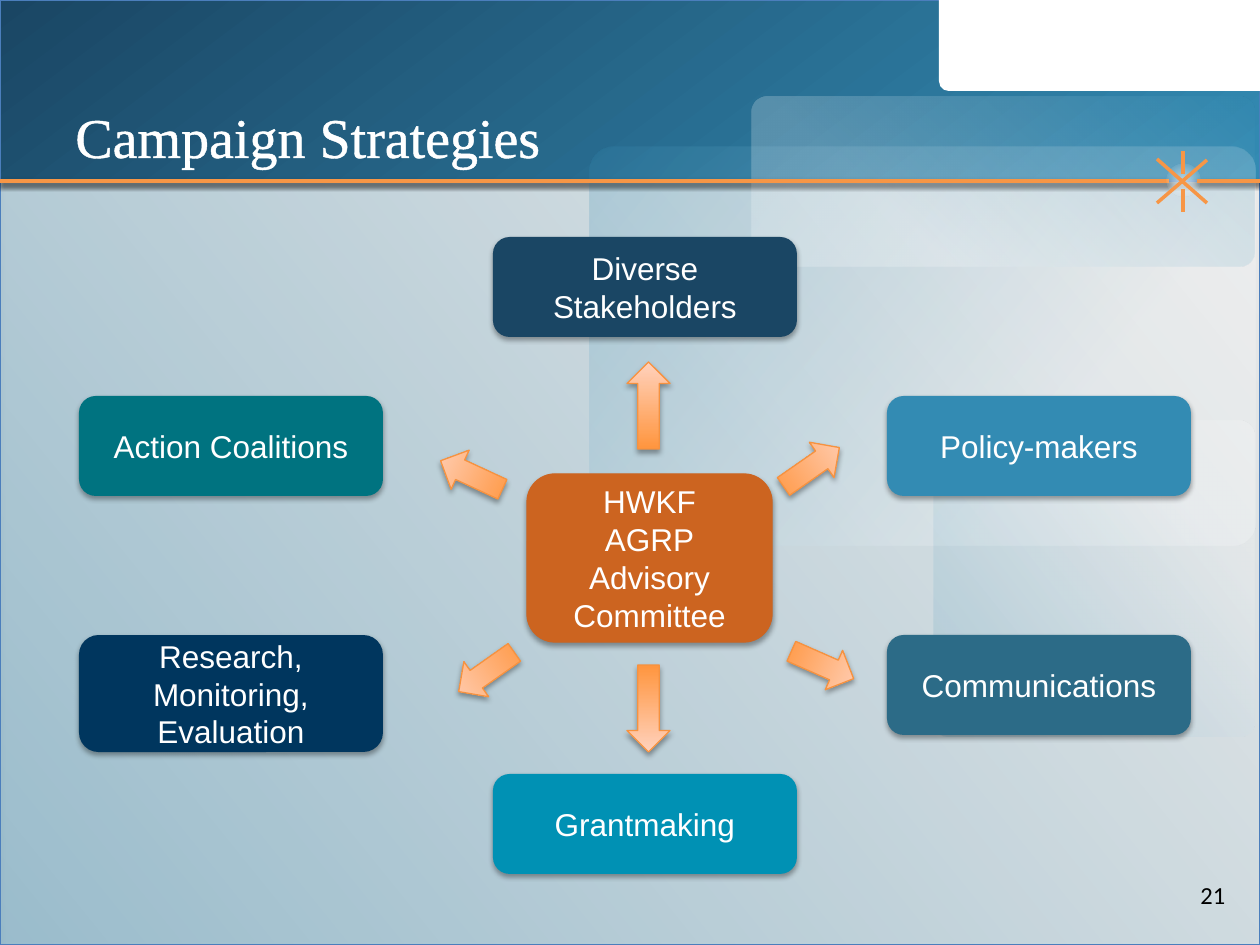
from lxml import etree
from pptx import Presentation
from pptx import util as u
from pptx.dml.color import RGBColor
from pptx.enum import shapes, text
from pptx.oxml import parse_xml
from pptx.oxml.ns import nsdecls, qn

PX = u.Inches(1) / 126
KIND = shapes.MSO_SHAPE

WHITE = RGBColor(0xFF, 0xFF, 0xFF)
BLACK = RGBColor(0x00, 0x00, 0x00)
NAVY = RGBColor(0x1A, 0x46, 0x64)
BLUE = RGBColor(0x33, 0x8B, 0xB3)
SLATE = RGBColor(0x2C, 0x6B, 0x87)
TEAL = RGBColor(0x00, 0x73, 0x80)
MIDNIGHT = RGBColor(0x00, 0x36, 0x5E)
CYAN = RGBColor(0x00, 0x91, 0xB4)
RUST = RGBColor(0xCC, 0x64, 0x20)
ORANGE = RGBColor(0xF7, 0x96, 0x46)
FRAME = RGBColor(0x4B, 0x7E, 0xBC)
ARROW_EDGE = RGBColor(0xF6, 0x92, 0x40)
ARROW_TAIL = RGBColor(0xFF, 0x95, 0x3E)
ARROW_HEAD = RGBColor(0xFF, 0xD2, 0xBD)

CARD_WIDTH, CARD_HEIGHT = 304, 100
LEFT, MIDDLE, RIGHT = 79, 493, 887
CARDS = [
    ("Diverse Stakeholders", MIDDLE, 237, CARD_HEIGHT, NAVY),
    ("Policy-makers", RIGHT, 396, CARD_HEIGHT, BLUE),
    ("Communications", RIGHT, 635, CARD_HEIGHT, SLATE),
    ("Action Coalitions", LEFT, 396, CARD_HEIGHT, TEAL),
    ("Research, Monitoring, Evaluation", LEFT, 635, 117, MIDNIGHT),
    ("Grantmaking", MIDDLE, 774, CARD_HEIGHT, CYAN),
]
# left, top, height, rotation
ARROWS = [
    (627, 362, 87, 0),
    (627, 665, 87, 180),
    (801, 631, 68, 113.8),
    (790, 433, 68, 55.1),
    (465, 638, 68, 234.8),
    (450, 441, 68, 294.8),
]
# left, top, width, height, corner, white stop, opacity, angle
PANELS = [
    (590, 147, 665, 399, 0.06, 29, 22, 219),
    (752, 97, 502, 170, 0.09, 29, 22, 312),
    (934, 421, 320, 315, 0.05, 23, 17, 143),
]
STAR_RAYS = [
    (1183, 151, 1183, 174),
    (1207, 160, 1157, 203),
    (1157, 159, 1207, 203),
    (1183, 212, 1183, 189),
]


def px(*values):
    return [u.Emu(round(value * PX)) for value in values]


def add_shadow(effects, opacity):
    effects.append(parse_xml(
        f'<a:outerShdw {nsdecls("a")} blurRad="{u.Pt(3.1)}" dist="{u.Pt(1.8)}" '
        f'dir="5400000" rotWithShape="0"><a:srgbClr val="000000">'
        f'<a:alpha val="{opacity * 1000}"/></a:srgbClr></a:outerShdw>'))


def set_gradient(shape, stops, angle=None):
    """Stops are (position, colour, opacity); no angle means a circular one."""
    marks = "".join(
        f'<a:gs pos="{place * 1000}"><a:srgbClr val="{color}">'
        f'<a:alpha val="{opacity * 1000}"/></a:srgbClr></a:gs>'
        for place, color, opacity in stops)
    if angle is None:
        course = ('<a:path path="circle"><a:fillToRect l="50000" t="50000" '
                  'r="50000" b="50000"/></a:path>')
    else:
        course = f'<a:lin ang="{angle * 60000}" scaled="0"/>'
    shape.fill.background()
    blank = shape._element.spPr.find(qn("a:noFill"))
    blank.getparent().replace(blank, parse_xml(
        f'<a:gradFill {nsdecls("a")} rotWithShape="1"><a:gsLst>{marks}</a:gsLst>'
        f'{course}</a:gradFill>'))


def add_box(page, kind, frame, fill=None, line=None, shadow=False, corner=None):
    shape = page.shapes.add_shape(kind, *px(*frame))
    if corner is not None:
        shape.adjustments[0] = corner
    if fill is not None:
        shape.fill.solid()
        shape.fill.fore_color.rgb = fill
    if line is None:
        shape.line.fill.background()
    else:
        shape.line.color.rgb = line
        shape.line.width = u.Pt(0.75)
    shape.shadow.inherit = False
    if shadow:
        add_shadow(shape._element.spPr.find(qn("a:effectLst")), 35)
    return shape


def add_line(page, ends, shadow=False):
    line = page.shapes.add_connector(shapes.MSO_CONNECTOR.STRAIGHT, *px(*ends))
    line.line.color.rgb = ORANGE
    line.line.width = u.Pt(2)
    effects = etree.SubElement(line._element.spPr, qn("a:effectLst"))
    if shadow:
        add_shadow(effects, 38)


def add_run(para, words, size, font, color):
    run = para.add_run()
    run.text = words
    run.font.size = u.Pt(size)
    run.font.name = font
    run.font.color.rgb = color
    return run


def add_card(page, lines, frame, fill, line=None):
    card = add_box(page, KIND.ROUNDED_RECTANGLE, frame, fill, line, shadow=True)
    body = card.text_frame
    body.word_wrap = True
    body.vertical_anchor = text.MSO_ANCHOR.MIDDLE
    for index, words in enumerate(lines):
        para = body.add_paragraph() if index else body.paragraphs[0]
        para.alignment = text.PP_ALIGN.CENTER
        add_run(para, words, 18, "Arial", WHITE)


def add_arrow(page, left, top, height, rotation):
    arrow = add_box(page, KIND.UP_ARROW, (left, top, 43, height),
                    line=ARROW_EDGE, shadow=True)
    set_gradient(arrow, [(0, ARROW_TAIL, 100), (100, ARROW_HEAD, 100)], 270)
    arrow.rotation = rotation


def add_backdrop(page):
    body = add_box(page, KIND.RECTANGLE, (0, 181, 1260, 764), line=FRAME, shadow=True)
    set_gradient(body, [(0, BLUE, 39), (100, WHITE, 39)], 321)
    header = add_box(page, KIND.RECTANGLE, (0, 0, 1260, 181), line=FRAME, shadow=True)
    set_gradient(header, [(0, NAVY, 100), (100, BLUE, 100)], 53)
    for *frame, corner, start, opacity, angle in PANELS:
        panel = add_box(page, KIND.ROUNDED_RECTANGLE, frame, corner=corner)
        set_gradient(panel, [(start, WHITE, opacity), (100, BLUE, opacity)], angle)

    # Orange rule with its star
    add_line(page, (0, 181, 1169, 181), shadow=True)
    glow = add_box(page, KIND.OVAL, (1167, 164, 33, 33))
    set_gradient(glow, [(2, WHITE, 54), (81, WHITE, 0)])
    for ray in STAR_RAYS:
        add_line(page, ray)
    add_line(page, (1197, 181, 1260, 181), shadow=True)

    # White corner
    add_box(page, KIND.ROUNDED_RECTANGLE, (939, -16, 348, 107), WHITE, corner=0.09)


def add_title(page):
    body = page.shapes.add_textbox(*px(63, 87, 721, 113)).text_frame
    body.word_wrap = True
    body.margin_top, = px(15)
    run = add_run(body.paragraphs[0], "Campaign Strategies", 32, "Times New Roman", WHITE)
    run.font._element.insert(0, parse_xml(
        f'<a:ln {nsdecls("a")} w="{u.Pt(1.45)}"><a:solidFill>'
        f'<a:srgbClr val="{WHITE}"/></a:solidFill></a:ln>'))


def add_page_number(page):
    body = page.shapes.add_textbox(*px(1188, 874, 50, 43)).text_frame
    body.word_wrap = False
    add_run(body.paragraphs[0], "21", 14, "Calibri", BLACK)


def main():
    deck = Presentation()
    deck.slide_width, deck.slide_height = px(1260, 945)
    page = deck.slides.add_slide(deck.slide_layouts[6])
    add_backdrop(page)
    add_title(page)
    # Strategies around the leading group
    for words, left, top, height, color in CARDS:
        add_card(page, [words], (left, top, CARD_WIDTH, height), color)
    add_card(page, ["HWKF", "AGRP", "Advisory Committee"],
             (527, 474, 245, 168), RUST, RUST)
    for arrow in ARROWS:
        add_arrow(page, *arrow)
    add_page_number(page)
    deck.save("out.pptx")


if __name__ == "__main__":
    main()
